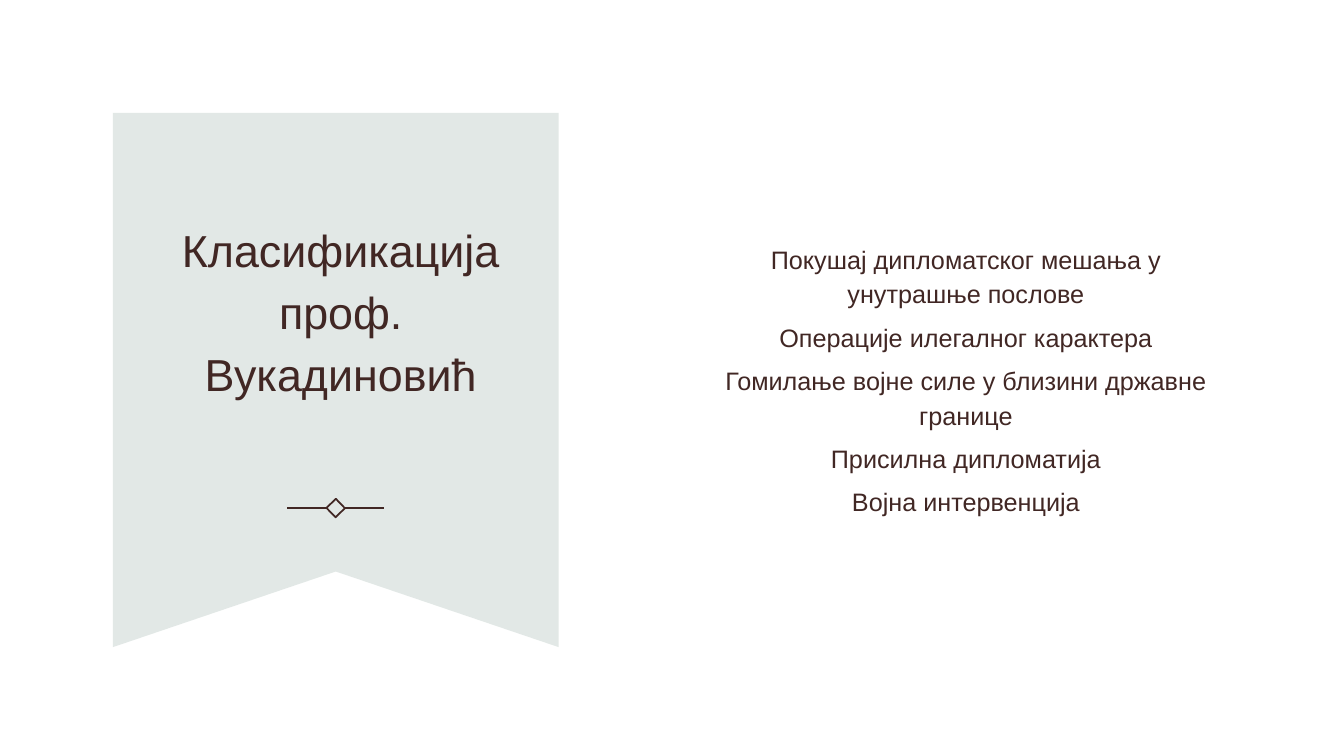
from lxml.etree import SubElement
from pptx import Presentation
from pptx.dml.color import RGBColor
from pptx.enum.shapes import MSO_CONNECTOR, MSO_SHAPE
from pptx.enum.text import MSO_ANCHOR, MSO_AUTO_SIZE, PP_ALIGN
from pptx.oxml.ns import qn
from pptx.util import Inches, Pt

COLORS = {"background": "FFFFFF", "banner": "E2E8E6", "ink": "412724"}
FRAME_FORMAT = {
    "word_wrap": True,
    "auto_size": MSO_AUTO_SIZE.NONE,
    "vertical_anchor": MSO_ANCHOR.MIDDLE,
}
PARAGRAPH_FORMAT = {
    "alignment": PP_ALIGN.CENTER,
    "line_spacing": 1.15,
    "space_before": Pt(0),
    "space_after": Pt(6),
}
TITLE = "Класификација проф. Вукадиновић"
FORMS_OF_INTERVENTION = [
    "Покушај дипломатског мешања у унутрашње послове",
    "Операције илегалног карактера",
    "Гомилање војне силе у близини државне границе",
    "Присилна дипломатија",
    "Војна интервенција",
]


def color(name):
    return RGBColor.from_string(COLORS[name])


def apply_format(target, values):
    for name, value in values.items():
        setattr(target, name, value)


def fill_placeholder(placeholder, box, lines, size):
    """Place the placeholder in front and set its lines, centred and unbulleted."""
    placeholder.left, placeholder.top, placeholder.width, placeholder.height = map(Inches, box)
    frame = placeholder.text_frame
    frame.text = "\n".join(lines)
    apply_format(frame, FRAME_FORMAT)
    for paragraph in frame.paragraphs:
        apply_format(paragraph, PARAGRAPH_FORMAT)
        apply_format(paragraph.runs[0].font, {"name": "Arial", "size": Pt(size)})
        paragraph.runs[0].font.color.rgb = color("ink")
        properties = paragraph.runs[0].font._element.getparent().getparent().get_or_add_pPr()
        properties.set("marL", "0")
        properties.set("indent", "0")
        SubElement(properties, qn("a:buNone"))
    placeholder.element.getparent().append(placeholder.element)


def add_banner(slide, left, top, right, bottom, notch):
    """Draw a ribbon whose lower edge is notched up to the given height."""
    middle = (left + right) / 2
    outline = [(right, top), (right, bottom), (middle, notch), (left, bottom)]
    builder = slide.shapes.build_freeform(Inches(left), Inches(top))
    builder.add_line_segments([(Inches(x), Inches(y)) for x, y in outline], close=True)
    banner = builder.convert_to_shape()
    banner.shadow.inherit = False
    banner.fill.solid()
    banner.fill.fore_color.rgb = color("banner")
    banner.line.fill.background()


def set_line(shape):
    shape.line.color.rgb = color("ink")
    shape.line.width = Pt(1.25)


def add_ornament(slide, center_x, center_y, side=0.13, inner=0.09, outer=0.48):
    """Group a tilted square with a short line on either side."""
    shapes = slide.shapes.add_group_shape().shapes
    square = shapes.add_shape(
        MSO_SHAPE.RECTANGLE,
        Inches(center_x - side / 2), Inches(center_y - side / 2), Inches(side), Inches(side),
    )
    square.rotation = 316
    square.shadow.inherit = False
    square.fill.background()
    set_line(square)
    for direction in (-1, 1):
        line = shapes.add_connector(
            MSO_CONNECTOR.STRAIGHT,
            Inches(center_x + direction * inner), Inches(center_y),
            Inches(center_x + direction * outer), Inches(center_y),
        )
        set_line(line)
        SubElement(line.element.spPr, qn("a:effectLst"))


def main():
    presentation = Presentation()
    presentation.slide_width = Inches(13.33)
    presentation.slide_height = Inches(7.5)
    slide = presentation.slides.add_slide(presentation.slide_layouts[1])
    slide.background.fill.solid()
    slide.background.fill.fore_color.rgb = color("background")

    add_banner(slide, 1.12, 1.12, 5.54, 6.42, notch=5.67)
    add_ornament(slide, 3.33, 5.04)
    fill_placeholder(slide.shapes.title, (1.54, 1.48, 3.68, 3.14), [TITLE], 32)
    fill_placeholder(slide.placeholders[1], (6.99, 0.79, 5.18, 5.92), FORMS_OF_INTERVENTION, 18)
    presentation.save("out.pptx")


if __name__ == "__main__":
    main()
